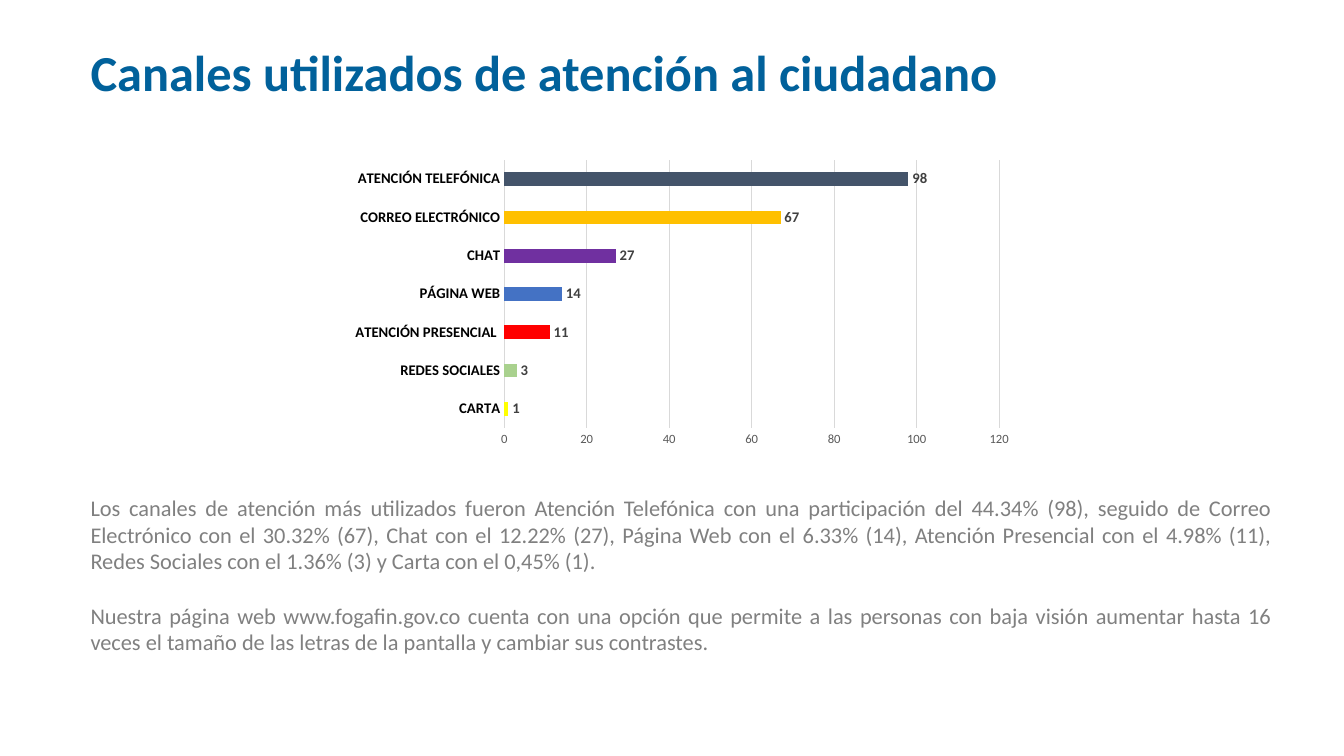
"""Build a slide on the channels used to serve citizens."""
from dataclasses import dataclass

import lxml.etree
import pptx
import pptx.chart.data
import pptx.dml.color
import pptx.enum.chart
import pptx.enum.text
import pptx.oxml.ns
import pptx.util

WIDTH, HEIGHT = 13.33, 7.5
FONT = "Calibri"
GRID_GREY = "D9D9D9"
ALIGN = pptx.enum.text.PP_ALIGN
ANCHOR = pptx.enum.text.MSO_ANCHOR


@dataclass
class Area:
    left: float
    top: float
    width: float
    height: float

    def lengths(self) -> tuple:
        shares = (self.left, self.top, self.width, self.height)
        sides = (WIDTH, HEIGHT, WIDTH, HEIGHT)
        return tuple(pptx.util.Inches(share * side) for share, side in zip(shares, sides))


@dataclass
class TextBlock:
    area: Area
    paragraphs: list[str]
    size: float
    color: str
    bold: bool = False
    align: ALIGN = ALIGN.LEFT
    anchor: ANCHOR = ANCHOR.TOP
    line_spacing: float = 1.0
    gap: float = 0


@dataclass
class Channel:
    name: str
    requests: int
    color: str


CHANNELS = [
    Channel("CARTA", 1, "FFFF00"),
    Channel("REDES SOCIALES", 3, "A9D18E"),
    Channel("ATENCIÓN PRESENCIAL ", 11, "FF0000"),
    Channel("PÁGINA WEB", 14, "4472C4"),
    Channel("CHAT", 27, "7030A0"),
    Channel("CORREO ELECTRÓNICO", 67, "FFC000"),
    Channel("ATENCIÓN TELEFÓNICA", 98, "44546A"),
]

TEXT_BLOCKS = [
    TextBlock(
        Area(0.06, 0.0267, 0.7944, 0.1453),
        ["Canales utilizados de atención al ciudadano"],
        36, "01619B", bold=True, anchor=ANCHOR.MIDDLE, line_spacing=0.9,
    ),
    TextBlock(
        Area(0.06, 0.6467, 0.8942, 0.2293),
        [
            "Los canales de atención más utilizados fueron Atención Telefónica con una "
            "participación del 44.34% (98), seguido de Correo Electrónico con el 30.32% (67), "
            "Chat con el 12.22% (27), Página Web con el 6.33% (14), Atención Presencial con el "
            "4.98% (11), Redes Sociales con el 1.36% (3) y Carta con el 0,45% (1).",
            "Nuestra página web www.fogafin.gov.co cuenta con una opción que permite a las "
            "personas con baja visión aumentar hasta 16 veces el tamaño de las letras de la "
            "pantalla y cambiar sus contrastes.",
        ],
        16, "808080", align=ALIGN.JUSTIFY, gap=19.5,
    ),
]
CHART_AREA = Area(0.2543, 0.204, 0.5064, 0.3947)


def rgb(color: str) -> pptx.dml.color.RGBColor:
    """Turn a hex string into a colour."""
    return pptx.dml.color.RGBColor.from_string(color)


def style_font(font, size: float, color: str, bold: bool = False) -> None:
    """Set the typeface, size, colour and weight of a font."""
    font.name = FONT
    font.size = pptx.util.Pt(size)
    font.color.rgb = rgb(color)
    font.bold = bold


def style_line(line, color: str) -> None:
    """Give a chart line its colour and thin width."""
    line.color.rgb = rgb(color)
    line.width = pptx.util.Pt(0.75)


def add_text(page, block: TextBlock) -> None:
    """Add a text box with one paragraph per string."""
    frame = page.shapes.add_textbox(*block.area.lengths()).text_frame
    frame.word_wrap = True
    frame.vertical_anchor = block.anchor
    frame.text = "\n".join(block.paragraphs)
    for position, para in enumerate(frame.paragraphs):
        para.alignment = block.align
        para.line_spacing = block.line_spacing
        if position:
            para.space_before = pptx.util.Pt(block.gap)
        for span in para.runs:
            style_font(span.font, block.size, block.color, block.bold)


def style_axes(chart) -> None:
    """Style the channel names, the scale and the gridlines."""
    names, scale = chart.category_axis, chart.value_axis
    for axis in (names, scale):
        axis.major_tick_mark = pptx.enum.chart.XL_TICK_MARK.NONE
        axis.minor_tick_mark = pptx.enum.chart.XL_TICK_MARK.NONE
    style_font(names.tick_labels.font, 10.5, "000000", bold=True)
    style_font(scale.tick_labels.font, 9, "595959")
    style_line(names.format.line, GRID_GREY)
    scale.format.line.fill.background()
    scale.has_major_gridlines = True
    style_line(scale.major_gridlines.format.line, GRID_GREY)


def add_channel_chart(page, area: Area, channels: list[Channel]) -> None:
    """Add the bar chart with one coloured bar per channel."""
    data = pptx.chart.data.CategoryChartData()
    data.categories = [channel.name for channel in channels]
    data.add_series("Series 1", [channel.requests for channel in channels])
    kind = pptx.enum.chart.XL_CHART_TYPE.BAR_CLUSTERED
    chart = page.shapes.add_chart(kind, *area.lengths(), data).chart
    chart.has_legend = False
    chart.has_title = False
    style_font(chart.font, 10, "000000")
    style_axes(chart)

    plot = chart.plots[0]
    plot.gap_width = 182
    plot.vary_by_categories = False
    series = plot.series[0]
    series.format.fill.solid()
    series.format.fill.fore_color.rgb = rgb("5B9BD5")
    for position, channel in enumerate(channels):
        fill = series.points[position].format.fill
        fill.solid()
        fill.fore_color.rgb = rgb(channel.color)
    labels = series.data_labels
    labels.show_value = True
    labels.position = pptx.enum.chart.XL_LABEL_POSITION.OUTSIDE_END
    style_font(labels.font, 10.5, "404040", bold=True)


def main() -> None:
    """Build and save the deck."""
    deck = pptx.Presentation()
    deck.slide_width = pptx.util.Inches(WIDTH)
    deck.slide_height = pptx.util.Inches(HEIGHT)
    page = deck.slides.add_slide(deck.slide_layouts[6])
    for block in TEXT_BLOCKS:
        add_text(page, block)
    add_channel_chart(page, CHART_AREA, CHANNELS)
    deck.save("out.pptx")


if __name__ == "__main__":
    main()
